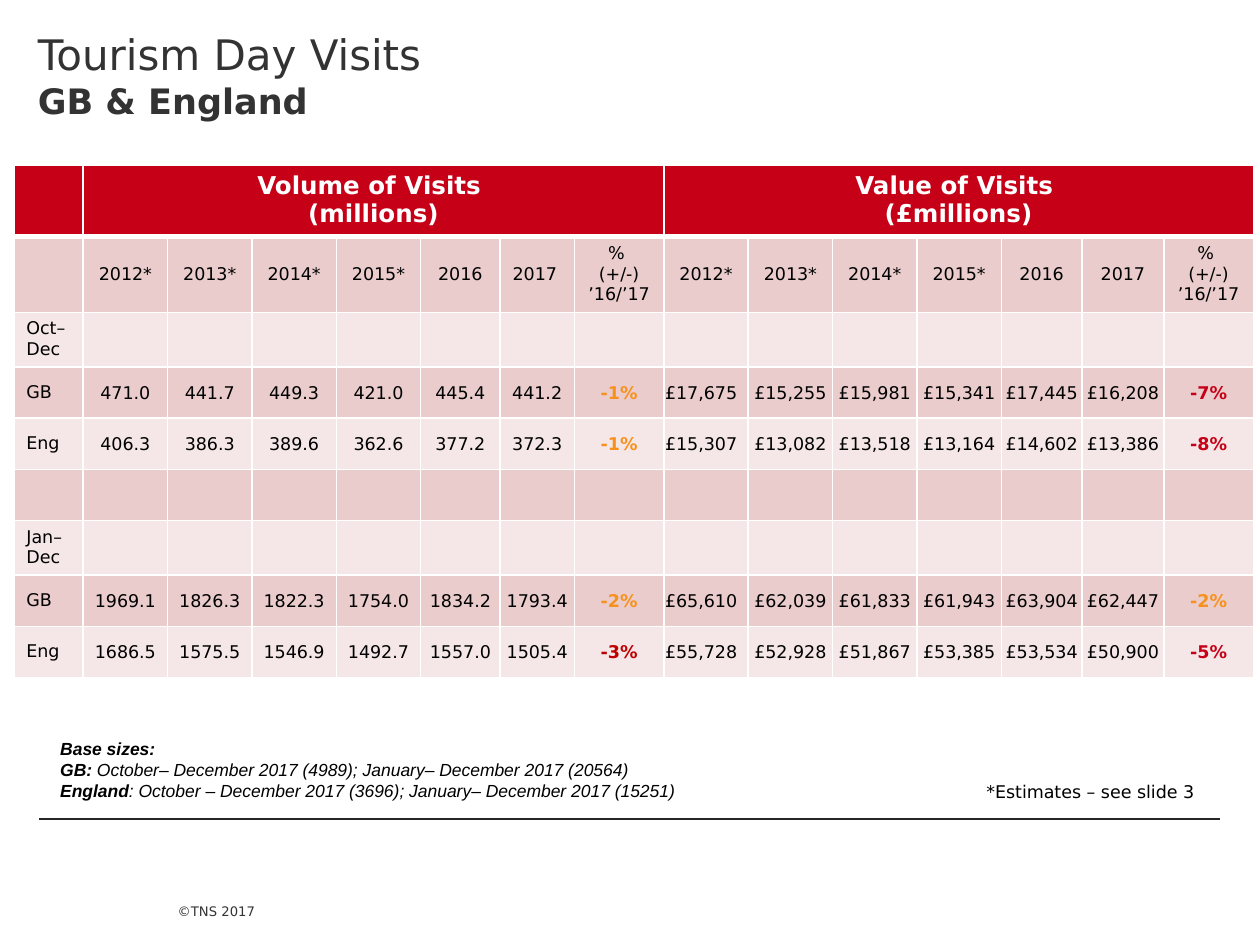
from lxml import etree
from pptx import Presentation
from pptx import util as u
from pptx.dml.color import RGBColor
from pptx.enum import shapes, text
from pptx.oxml import ns

UNIT = u.Inches(0.1)
SANS, SERIFLESS = "DejaVu Sans", "Arial"
RED, AMBER, DEEP_RED = "C50017", "F7911E", "C00000"
WHITE, BLACK, GREY = "FFFFFF", "000000", "333333"
BANDS = ("F5E7E8", "EACCCC")
CHANGE_COLOURS = {"-1%": AMBER, "-2%": AMBER, "-3%": DEEP_RED}
LEFT, CENTER = text.PP_ALIGN.LEFT, text.PP_ALIGN.CENTER
TOP, MIDDLE, BOTTOM = (text.MSO_ANCHOR.TOP, text.MSO_ANCHOR.MIDDLE,
                       text.MSO_ANCHOR.BOTTOM)
SIDES = ("left", "top", "right", "bottom")

COLUMNS = [5.5] + [6.7] * 4 + [6.3, 5.9, 7.1] + [6.7] * 4 + [6.4, 6.5, 7.1]
YEARS = ["2012*", "2013*", "2014*", "2015*", "2016", "2017",
         "% \n(+/-) ’16/’17"]
GROUPS = {1: "Volume of Visits \n(millions)", 8: "Value of Visits \n(£millions)"}
ROWS = [
    [""] + YEARS * 2,
    ["Oct– Dec"],
    ["GB", "471.0", "441.7", "449.3", "421.0", "445.4", "441.2", "-1%",
     "£17,675", "£15,255", "£15,981", "£15,341", "£17,445", "£16,208", "-7%"],
    ["Eng", "406.3", "386.3", "389.6", "362.6", "377.2", "372.3", "-1%",
     "£15,307", "£13,082", "£13,518", "£13,164", "£14,602", "£13,386", "-8%"],
    [],
    ["Jan–Dec"],
    ["GB", "1969.1", "1826.3", "1822.3", "1754.0", "1834.2", "1793.4", "-2%",
     "£65,610", "£62,039", "£61,833", "£61,943", "£63,904", "£62,447", "-2%"],
    ["Eng", "1686.5", "1575.5", "1546.9", "1492.7", "1557.0", "1505.4", "-3%",
     "£55,728", "£52,928", "£51,867", "£53,385", "£53,534", "£50,900", "-5%"],
]


def grid(*lengths):
    """Turn grid units into slide lengths."""
    return [round(length * UNIT) for length in lengths]


def colour(value):
    """Turn a hex string into a colour."""
    return RGBColor.from_string(value)


def set_all(target, values):
    """Set each named attribute of the target."""
    for name, value in values.items():
        setattr(target, name, value)


def add_span(para, words, tone, **style):
    """Add a styled run to a paragraph."""
    span = para.add_run()
    span.text = words
    set_all(span.font, style)
    span.font.color.rgb = colour(tone)


def add_box(page, box, insets=None, **frame_style):
    """Add a text box and return its frame."""
    frame = page.shapes.add_textbox(*grid(*box)).text_frame
    set_all(frame, {"word_wrap": True, **frame_style})
    if insets:
        set_all(frame, {f"margin_{side}": length
                        for side, length in zip(SIDES, grid(*insets))})
    return frame


def add_title(page, box):
    """Place the two-line heading."""
    para = add_box(page, box, (3, 2.3, 3, 0)).paragraphs[0]
    add_span(para, "Tourism Day Visits ", GREY, name=SANS, size=u.Pt(24))
    para.add_line_break()
    add_span(para, "GB & England", GREY, name=SANS, size=u.Pt(20), bold=True)


def add_borders(cell, bottom):
    """Draw white borders round a cell."""
    properties = cell._tc.get_or_add_tcPr()
    for side, points in (("L", 1), ("R", 1), ("T", 1), ("B", bottom)):
        line = etree.SubElement(properties, ns.qn(f"a:ln{side}"), w=str(u.Pt(points)))
        fill = etree.SubElement(line, ns.qn("a:solidFill"))
        etree.SubElement(fill, ns.qn("a:srgbClr"), val=WHITE)


def paint_cell(cell, fill, bottom=1):
    """Give a cell its borders and fill."""
    add_borders(cell, bottom)
    cell.fill.solid()
    cell.fill.fore_color.rgb = colour(fill)


def write_cell(cell, words, align, tone, **style):
    """Write each line of a cell as a paragraph."""
    cell.text_frame.text = words
    for para in cell.text_frame.paragraphs:
        para.alignment = align
        for span in para.runs:
            set_all(span.font, {"name": SANS, **style})
            span.font.color.rgb = colour(tone)


def add_header(table):
    """Fill and merge the top row of the table."""
    for column in range(len(COLUMNS)):
        paint_cell(table.cell(0, column), RED, 3)
    for start, words in GROUPS.items():
        table.cell(0, start).merge(table.cell(0, start + len(YEARS) - 1))
        write_cell(table.cell(0, start), words, CENTER, WHITE,
                   size=u.Pt(14), bold=True)


def add_body_cell(cell, words, row, column):
    """Format one body cell by its place and content."""
    paint_cell(cell, BANDS[row % 2])
    if not words:
        return
    figure = row > 1 and column > 0
    change = figure and words.endswith("%")
    left = column == 0 or (row, column) == (1, 6) or (figure and column == 8)
    cell.vertical_anchor = TOP if row == 2 else MIDDLE
    if figure:
        set_all(cell, {f"margin_{side}": length
                       for side, length in zip(SIDES, grid(0.1, 0.1, 0.1, 0))})
    tone = CHANGE_COLOURS.get(words, RED) if change else BLACK
    write_cell(cell, words, LEFT if left else CENTER, tone,
               size=u.Pt(10), bold=change)


def add_visits_table(page, left, top, row_height):
    """Place the table of visits."""
    count = len(ROWS) + 1
    table = page.shapes.add_table(
        count, len(COLUMNS),
        *grid(left, top, sum(COLUMNS), row_height * count)).table
    for column, width in zip(table.columns, grid(*COLUMNS)):
        column.width = width
    add_header(table)
    for row, words in enumerate(ROWS, 1):
        for column in range(len(COLUMNS)):
            add_body_cell(table.cell(row, column),
                          words[column] if column < len(words) else "", row, column)


def add_base_sizes(page, box):
    """Place the note on sample sizes."""
    frame = add_box(page, box)
    style = {"name": SERIFLESS, "size": u.Pt(10), "italic": True}
    para = frame.paragraphs[0]
    add_span(para, "Base sizes: ", BLACK, bold=True, **style)
    para.add_line_break()
    notes = [("GB:", " October– December 2017 (4989); January– December 2017 (20564)"),
             ("England", ": October – December 2017 (3696); January– December 2017 (15251)")]
    for place, sizes in notes:
        add_span(para, place, BLACK, bold=True, **style)
        add_span(para, sizes, BLACK, bold=False, **style)
        if place == "GB:":
            para = frame.add_paragraph()


def add_estimate_note(page, box):
    """Place the note on estimates."""
    frame = add_box(page, box, word_wrap=False)
    add_span(frame.paragraphs[0], "*Estimates – see slide 3", BLACK,
             name=SANS, size=u.Pt(10))


def add_footer(page, rule, box):
    """Place the rule and the copyright line."""
    line = page.shapes.add_connector(shapes.MSO_CONNECTOR.STRAIGHT, *grid(*rule))
    line.line.width = u.Pt(0.75)
    line.line.color.rgb = colour("262626")
    etree.SubElement(line._element.spPr, ns.qn("a:effectLst"))
    frame = add_box(page, box, (0, 0, 0, 2.9), vertical_anchor=BOTTOM)
    add_span(frame.paragraphs[0], "©TNS 2017", GREY, name=SANS, size=u.Pt(7.5))


def main():
    """Build the slide and save it."""
    deck = Presentation()
    deck.slide_width, deck.slide_height = grid(100, 75)
    page = deck.slides.add_slide(deck.slide_layouts[6])
    add_footer(page, (3.1, 65, 96.8, 65), (14.1, 69.2, 8.3, 5.8))
    add_title(page, (0, 0, 55.5, 14.1))
    add_visits_table(page, 1.1, 13.1, 4.06)
    add_base_sizes(page, (3.8, 58.1, 84.4, 6.1))
    add_estimate_note(page, (77.3, 61.5, 19.2, 2.7))
    deck.save("out.pptx")


if __name__ == "__main__":
    main()
